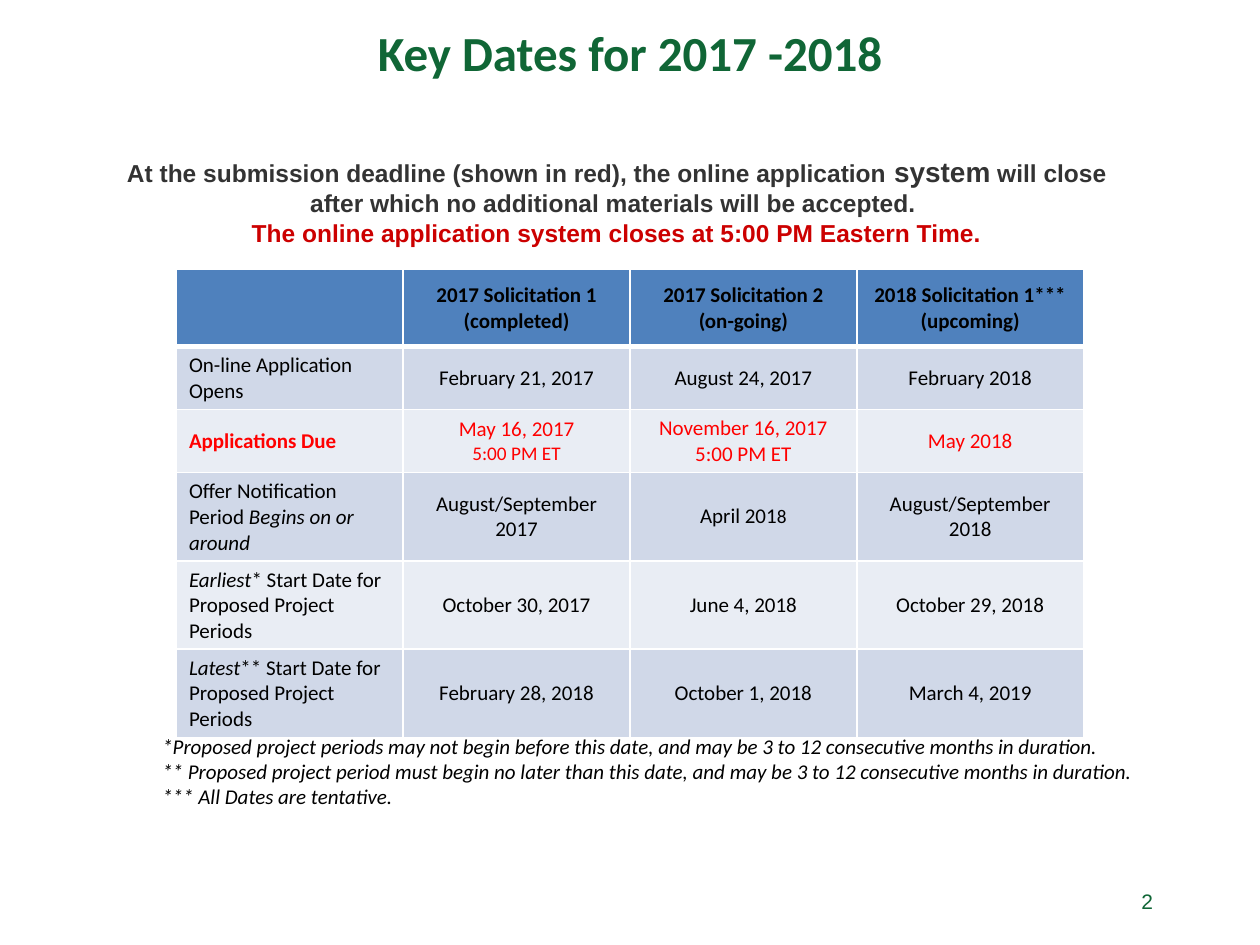
from pptx import Presentation
from pptx.dml.color import RGBColor
from pptx.enum.text import MSO_ANCHOR as ANCHOR, PP_ALIGN as ALIGN
from pptx.oxml import parse_xml
from pptx.oxml.ns import nsdecls
from pptx.util import Inches, Pt

GREEN = RGBColor(0x10, 0x66, 0x36)
GRAY = RGBColor(0x33, 0x33, 0x33)
DARK_RED = RGBColor(0xCC, 0x00, 0x00)
RED = RGBColor(0xFF, 0x00, 0x00)
BLACK = RGBColor(0x00, 0x00, 0x00)
HEADER = RGBColor(0x4F, 0x81, 0xBD)
BANDS = [RGBColor(0xE9, 0xED, 0xF4), RGBColor(0xD0, 0xD8, 0xE8)]

prs = Presentation()
prs.slide_width, prs.slide_height = Inches(10), Inches(7.5)
s = prs.slides.add_slide(prs.slide_layouts[6])

# Grid of 100 columns by 75 rows
COL, ROW = prs.slide_width / 100, prs.slide_height / 75


def write(tf, lines, align, font, size, color, bold=False, italic=False):
    """One paragraph per line; | splits runs: _ italic, ~ 11 pt, ^ 16 pt."""
    for i, line in enumerate(lines):
        p = tf.add_paragraph() if i else tf.paragraphs[0]
        p.alignment = align
        p.font.name, p.font.size = font, Pt(size)
        p.font.bold, p.font.italic = bold, italic
        p.font.color.rgb = color
        for part in line.split("|"):
            r = p.add_run()
            r.text = part.lstrip("_~^")
            if part.startswith("_"):
                r.font.italic = True
            elif part.startswith("~"):
                r.font.size = Pt(11)
            elif part.startswith("^"):
                r.font.size = Pt(16)


def text_box(x, y, w, h, anchor):
    sp = s.shapes.add_textbox(int(x * COL), int(y * ROW), int(w * COL), int(h * ROW))
    tf = sp.text_frame
    tf.word_wrap = True
    tf.vertical_anchor = anchor
    return tf


# Title
write(text_box(0, 0, 100, 8.3, ANCHOR.MIDDLE), ["Key Dates for 2017 -2018"],
      ALIGN.CENTER, "Calibri", 28, GREEN, bold=True)

# Dates table
rows = [
    ["", "2017 Solicitation 1\n(completed)", "2017 Solicitation 2\n(on-going)",
     "2018 Solicitation 1***\n(upcoming)"],
    ["On-line Application Opens", "February 21, 2017", "August 24, 2017", "February 2018"],
    ["Applications Due", "May 16, 2017\n~5:00 PM ET", "November 16, 2017\n5:00 PM ET",
     "May 2018"],
    ["Offer Notification Period |_Begins on or around", "August/September 2017",
     "April 201|~8", "August/September 2018"],
    ["_Earliest|* Start Date for Proposed Project Periods", "October 30, 2017",
     "June 4, 2018", "October 29, 2018"],
    ["_Latest|** Start Date for Proposed Project Periods", "February 28, 2018",
     "October 1, 2018", "March 4, 2019"],
]
row_heights = [6.1, 5, 5, 7, 7, 7]
DUE = 2
table = s.shapes.add_table(len(rows), 4, int(14 * COL), int(21.4 * ROW),
                           int(72 * COL), int(sum(row_heights) * ROW)).table
for i, row in enumerate(rows):
    table.rows[i].height = int(row_heights[i] * ROW)
    for j, text in enumerate(row):
        cell = table.cell(i, j)
        cell.vertical_anchor = ANCHOR.MIDDLE
        for side in "LRTB":
            heavy = (i, side) in [(0, "B"), (1, "T")]
            cell._tc.get_or_add_tcPr().append(parse_xml(
                f'<a:ln{side} {nsdecls("a")} w="{Pt(3 if heavy else 1)}"><a:solidFill>'
                f'<a:srgbClr val="FFFFFF"/></a:solidFill></a:ln{side}>'))
        cell.fill.solid()
        cell.fill.fore_color.rgb = BANDS[i % 2] if i else HEADER
        if text:
            write(cell.text_frame, text.split("\n"), ALIGN.CENTER if j else ALIGN.LEFT,
                  "Calibri", 12, RED if i == DUE else BLACK,
                  bold=i == 0 or (i, j) == (DUE, 0))

# Page number
write(text_box(34.2, 69.5, 58.3, 4, ANCHOR.MIDDLE), ["2"], ALIGN.RIGHT, "Arial", 12, GREEN)

# Deadline notice
tf = text_box(8.6, 11.8, 80.7, 8.4, ANCHOR.TOP)
write(tf, ["At the submission deadline (shown in red), the online application |^system"
           "| will close after which no additional materials will be accepted. ",
           "The online application system closes at 5:00 PM Eastern Time."],
      ALIGN.CENTER, "Arial", 14, GRAY, bold=True)
tf.paragraphs[1].font.color.rgb = DARK_RED

# Footnotes
write(text_box(11.9, 55.6, 79.3, 9.1, ANCHOR.BOTTOM),
      ["*Proposed project periods may not begin before this date, "
       "and may be 3 to 12 consecutive months in duration.",
       "** Proposed project period must begin no later than this date, "
       "and may be 3 to 12 consecutive months in duration.",
       "*** All Dates are tentative."],
      ALIGN.LEFT, "Calibri", 12, BLACK, italic=True)

prs.save("out.pptx")
